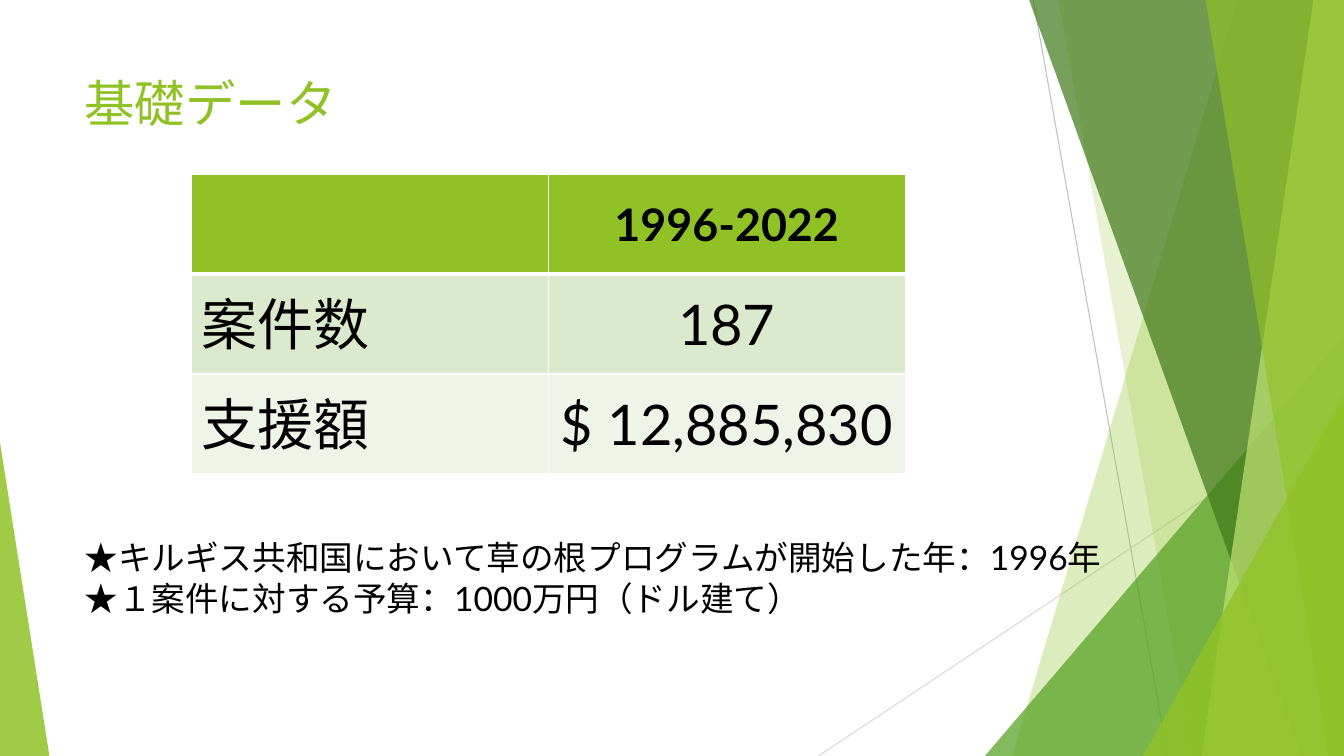
import pptx
import pptx.dml.color
import pptx.enum.shapes
import pptx.enum.text
import pptx.oxml
import pptx.oxml.ns
import pptx.util
from dataclasses import dataclass

# Content
HEADING = "基礎データ"
FIGURES = [
    ("", "1996-2022"),
    ("案件数", "187"),
    ("支援額", "$ 12,885,830"),
]
REMARKS = [
    "★キルギス共和国において草の根プログラムが開始した年：1996年",
    "★１案件に対する予算：1000万円（ドル建て）",
]


@dataclass(frozen=True)
class Theme:
    font: str = "Lato"
    ink: str = "000000"
    white: str = "FFFFFF"
    green: str = "90C226"
    leaf: str = "54A021"
    forest: str = "3F7819"
    lime: str = "C0E474"
    bands: tuple = ("DBE9CD", "EEF4E8")
    heading_size: int = 36
    header_size: int = 32
    figure_size: int = 40
    remark_size: int = 24


THEME = Theme()
ALIGN = pptx.enum.text.PP_ALIGN
MIDDLE = pptx.enum.text.MSO_ANCHOR.MIDDLE

# Layout, in percent of the slide's width and height
HEADING_BOX = (5.55, 8.93, 70.5, 9.6)
TABLE_BOX = (14.25, 23.07, 53.1, 39.6)
REMARKS_BOX = (5.55, 70.4, 79.58, 31.07)

# Decoration: rays (start, end, colour)
RAYS = [
    ((76.88, 0), (86.88, 100), "BFBFBF"),
    ((100, 53.73), (60.9, 100), "D9D9D9"),
]
# Panels reach the right edge: (top x, bottom x, colour, opacity)
# Corners stand on the bottom edge: (left, top, width, apex, colour, opacity)
DECOR = [
    ("panel", 92.1, 75.3, THEME.green, 30),
    ("panel", 78.75, 88.73, THEME.green, 20),
    ("corner", 73.28, 44.4, 26.72, 1, THEME.leaf, 72),
    ("panel", 76.58, 96.83, THEME.forest, 70),
    ("panel", 97.73, 89.4, THEME.lime, 70),
    ("panel", 89.7, 98.86, THEME.green, 65),
    ("corner", 85.05, 52.4, 14.95, 1, THEME.green, 80),
    ("corner", 0, 58.53, 3.68, 0, THEME.green, 85),
]

deck = pptx.Presentation()
deck.slide_width = pptx.util.Inches(13.33)
deck.slide_height = pptx.util.Inches(7.5)
slide = deck.slides.add_slide(deck.slide_layouts[6])


def across(share):
    return round(deck.slide_width * share / 100)


def down(share):
    return round(deck.slide_height * share / 100)


def place(left, top, width, height):
    return across(left), down(top), across(width), down(height)


def rgb(code):
    return pptx.dml.color.RGBColor.from_string(code)


def write(frame, text, size, color=THEME.ink, bold=False, align=ALIGN.LEFT, anchor=None):
    """Put text into a frame, one paragraph per line."""
    frame.word_wrap = True
    if anchor is not None:
        frame.vertical_anchor = anchor
    for number, line in enumerate(text.split("\n")):
        paragraph = frame.add_paragraph() if number else frame.paragraphs[0]
        paragraph.alignment = align
        run = paragraph.add_run()
        run.text = line
        font = run.font
        font.name, font.size, font.bold = THEME.font, pptx.util.Pt(size), bold
        font.color.rgb = rgb(color)
        east_asian = pptx.oxml.parse_xml(
            f'<a:ea {pptx.oxml.ns.nsdecls("a")} typeface="{THEME.font}"/>')
        run.font._element.find(pptx.oxml.ns.qn("a:latin")).addnext(east_asian)


def paint(shape, color, opacity):
    shape.shadow.inherit = False
    shape.fill.solid()
    shape.fill.fore_color.rgb = rgb(color)
    shape.line.fill.background()
    tint = shape._element.spPr.find(".//" + pptx.oxml.ns.qn("a:srgbClr"))
    tint.append(pptx.oxml.parse_xml(
        f'<a:alpha {pptx.oxml.ns.nsdecls("a")} val="{opacity * 1000}"/>'))


def panel(top_x, bottom_x, color, opacity):
    builder = slide.shapes.build_freeform(across(top_x), 0)
    builder.add_line_segments(
        [(across(100), 0), (across(100), down(100)), (across(bottom_x), down(100))])
    paint(builder.convert_to_shape(), color, opacity)


def corner(left, top, width, apex, color, opacity):
    shape = slide.shapes.add_shape(
        pptx.enum.shapes.MSO_SHAPE.ISOSCELES_TRIANGLE, *place(left, top, width, 100 - top))
    shape.adjustments[0] = apex
    paint(shape, color, opacity)


def border(cell, widths):
    """Draw white cell borders; widths are points for left, right, top, bottom."""
    properties = cell._tc.get_or_add_tcPr()
    for position, (side, width) in enumerate(zip("LRTB", widths)):
        properties.insert(position, pptx.oxml.parse_xml(
            f'<a:ln{side} {pptx.oxml.ns.nsdecls("a")} w="{pptx.util.Pt(width)}">'
            f'<a:solidFill><a:srgbClr val="{THEME.white}"/></a:solidFill></a:ln{side}>'))


# Decoration
for start, end, color in RAYS:
    ray = slide.shapes.add_connector(
        pptx.enum.shapes.MSO_CONNECTOR.STRAIGHT,
        across(start[0]), down(start[1]), across(end[0]), down(end[1]))
    ray.line.color.rgb = rgb(color)
    ray.line.width = pptx.util.Pt(0.75)
    ray._element.spPr.append(
        pptx.oxml.parse_xml(f'<a:effectLst {pptx.oxml.ns.nsdecls("a")}/>'))
draw = {"panel": panel, "corner": corner}
for kind, *details in DECOR:
    draw[kind](*details)

# Heading
heading = slide.shapes.add_textbox(*place(*HEADING_BOX))
write(heading.text_frame, HEADING, THEME.heading_size, color=THEME.green)

# Figures table
figures = slide.shapes.add_table(len(FIGURES), len(FIGURES[0]), *place(*TABLE_BOX)).table
for r, row in enumerate(FIGURES):
    for c, text in enumerate(row):
        cell = figures.cell(r, c)
        cell.fill.solid()
        cell.fill.fore_color.rgb = rgb(THEME.bands[(r - 1) % 2] if r else THEME.green)
        border(cell, (1, 1, 3 if r == 1 else 1, 1 if r else 3))
        cell.vertical_anchor = MIDDLE
        if text:
            write(cell.text_frame, text, THEME.figure_size if r else THEME.header_size,
                  bold=r == 0, align=ALIGN.CENTER if c else ALIGN.LEFT)

# Remarks
remarks = slide.shapes.add_textbox(*place(*REMARKS_BOX))
write(remarks.text_frame, "\n".join(REMARKS), THEME.remark_size)

deck.save("out.pptx")
